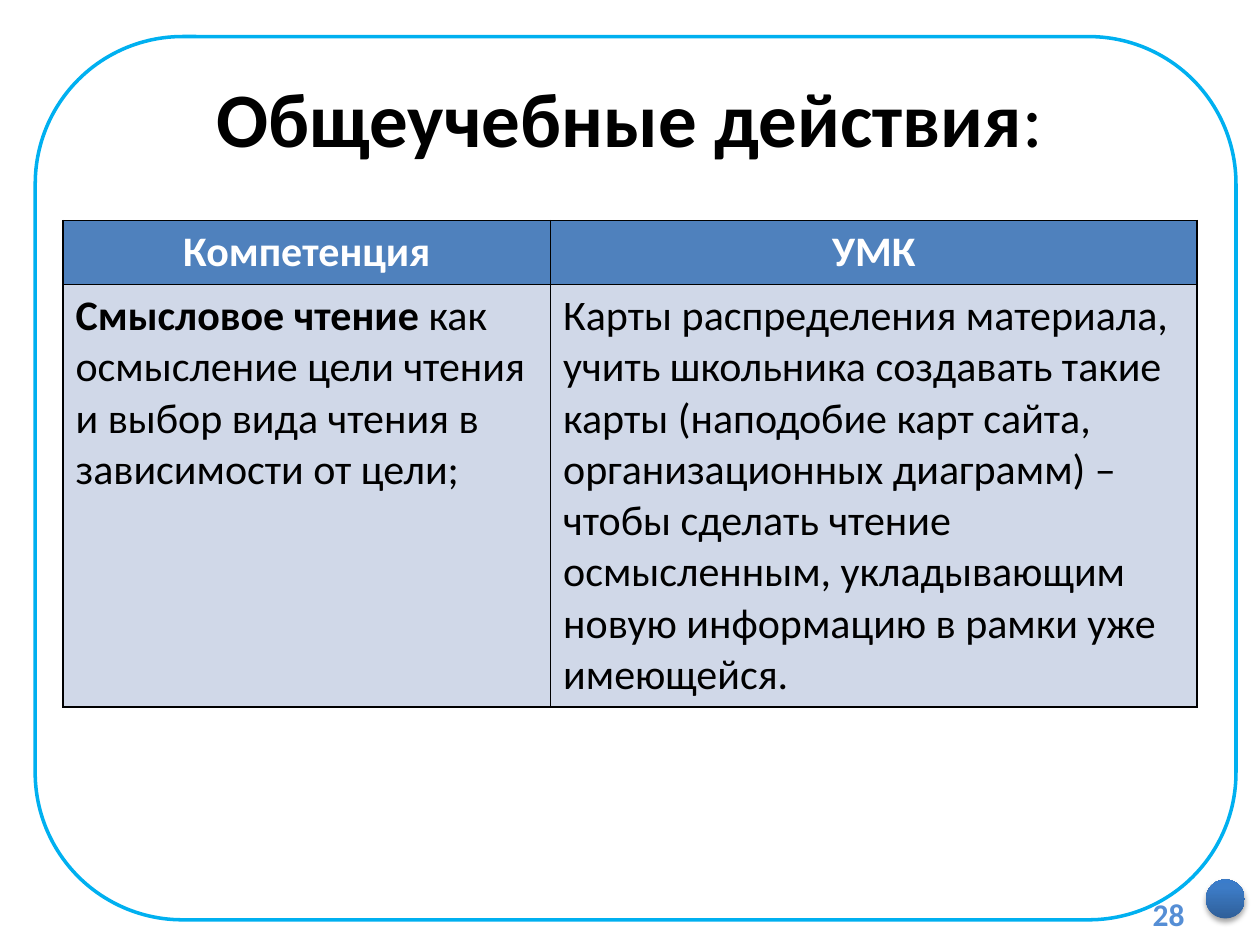
from copy import deepcopy
from dataclasses import dataclass

from lxml import etree
from pptx import Presentation
from pptx.dml.color import RGBColor
from pptx.enum.shapes import MSO_SHAPE
from pptx.enum.text import MSO_ANCHOR, PP_ALIGN
from pptx.oxml import parse_xml
from pptx.oxml.ns import nsdecls, qn
from pptx.util import Inches, Pt

LEFT, CENTER, RIGHT = PP_ALIGN.LEFT, PP_ALIGN.CENTER, PP_ALIGN.RIGHT
MIDDLE = MSO_ANCHOR.MIDDLE
ROUNDED, OVAL = MSO_SHAPE.ROUNDED_RECTANGLE, MSO_SHAPE.OVAL
TITLE_ONLY = 5


@dataclass(frozen=True)
class Theme:
    font: str = "Calibri"
    text: str = "000000"
    header_text: str = "FFFFFF"
    header_fill: str = "4F81BD"
    body_fill: str = "D0D8E8"
    frame: str = "00B0F0"
    number: str = "558ED5"
    badge: tuple = ((0, "2F5F99"), (0.8, "3D7CC7"), (1, "3A7CCB"))
    title_size: int = 44
    table_size: int = 24
    number_size: int = 18


def rgb(value):
    return RGBColor.from_string(value)


def box(*lengths):
    return [Inches(length) for length in lengths]


class SlideBuilder:
    def __init__(self, slide, theme):
        self.slide = slide
        self.theme = theme

    def add_text(self, text_frame, runs, size, color, align=LEFT):
        """Fill the first paragraph with (text, bold) runs."""
        paragraph = text_frame.paragraphs[0]
        paragraph.alignment = align
        for text, bold in runs:
            run = paragraph.add_run()
            run.text = text
            font_format = {"name": self.theme.font, "size": Pt(size), "bold": bold}
            for attribute, value in font_format.items():
                setattr(run.font, attribute, value)
            run.font.color.rgb = rgb(color)

    def title(self, runs, bounds):
        title = self.slide.shapes.title
        for side, value in zip(("left", "top", "width", "height"), box(*bounds)):
            setattr(title, side, value)
        title.text_frame.vertical_anchor = MIDDLE
        self.add_text(title.text_frame, runs, self.theme.title_size,
                      self.theme.text, CENTER)

    def frame(self, bounds):
        frame = self.slide.shapes.add_shape(ROUNDED, *box(*bounds))
        frame.shadow.inherit = False
        frame.fill.background()
        frame.line.color.rgb = rgb(self.theme.frame)
        frame.line.width = Pt(2)

    def badge(self, bounds):
        """Add a shaded circle, dark at the bottom, with a soft shadow below."""
        badge = self.slide.shapes.add_shape(OVAL, *box(*bounds))
        badge.line.fill.background()
        badge.fill.gradient()
        badge.fill.gradient_angle = 90
        stop_list = badge._element.spPr.find(".//" + qn("a:gsLst"))
        stop_list.append(deepcopy(stop_list[-1]))
        for stop, (position, color) in zip(badge.fill.gradient_stops, self.theme.badge):
            stop.position = position
            stop.color.rgb = rgb(color)
        badge.shadow.inherit = False
        effects = badge._element.spPr.find(qn("a:effectLst"))
        effects.append(parse_xml(
            f'<a:outerShdw {nsdecls("a")} blurRad="{Pt(3.1)}" dist="{Pt(1.8)}" '
            'dir="5400000" rotWithShape="0"><a:srgbClr val="000000">'
            '<a:alpha val="35000"/></a:srgbClr></a:outerShdw>'))

    def cell_borders(self, cell):
        properties = cell._tc.get_or_add_tcPr()
        for index, side in enumerate(("lnL", "lnR", "lnT", "lnB")):
            border = etree.Element(qn(f"a:{side}"), w=str(Pt(1)))
            fill = etree.SubElement(border, qn("a:solidFill"))
            etree.SubElement(fill, qn("a:srgbClr"), val=self.theme.text)
            properties.insert(index, border)

    def table(self, rows, left, top, widths, heights):
        bounds = box(left, top, sum(widths), sum(heights))
        table = self.slide.shapes.add_table(len(rows), len(widths), *bounds).table
        for column, width in zip(table.columns, widths):
            column.width = Inches(width)
        for row, height in zip(table.rows, heights):
            row.height = Inches(height)
        header_style = (self.theme.header_fill, self.theme.header_text, CENTER)
        body_style = (self.theme.body_fill, self.theme.text, LEFT)
        for row_index, row in enumerate(rows):
            fill, color, align = body_style if row_index else header_style
            for column_index, runs in enumerate(row):
                cell = table.cell(row_index, column_index)
                cell.fill.solid()
                cell.fill.fore_color.rgb = rgb(fill)
                self.add_text(cell.text_frame, runs, self.theme.table_size, color, align)
                self.cell_borders(cell)

    def page_number(self, number, bounds):
        text_frame = self.slide.shapes.add_textbox(*box(*bounds)).text_frame
        text_frame.word_wrap = True
        text_frame.vertical_anchor = MIDDLE
        self.add_text(text_frame, [(number, True)], self.theme.number_size,
                      self.theme.number, RIGHT)


def main():
    presentation = Presentation()
    presentation.slide_width, presentation.slide_height = box(10, 7.5)
    slide = presentation.slides.add_slide(presentation.slide_layouts[TITLE_ONLY])
    builder = SlideBuilder(slide, Theme())

    builder.frame((0.28, 0.29, 9.53, 7.01))
    builder.badge((9.57, 6.98, 0.31, 0.31))
    builder.title([("Общеучебные действия", True), (":", False)], (0.5, 0.3, 9, 1.25))
    competence = [
        ("Смысловое чтение", True),
        (" как осмысление цели чтения и выбор вида чтения в зависимости от цели;", False),
    ]
    materials = [(
        "Карты распределения материала, учить школьника создавать такие карты "
        "(наподобие карт сайта, организационных диаграмм) – чтобы сделать чтение "
        "осмысленным, укладывающим новую информацию в рамки уже имеющейся.", False)]
    builder.table(
        [[[("Компетенция", True)], [("УМК", True)]], [competence, materials]],
        left=0.5, top=1.75, widths=(3.87, 5.13), heights=(0.5, 3.35))
    builder.page_number("28", (8.94, 7.05, 0.56, 0.4))

    presentation.save("out.pptx")


if __name__ == "__main__":
    main()
